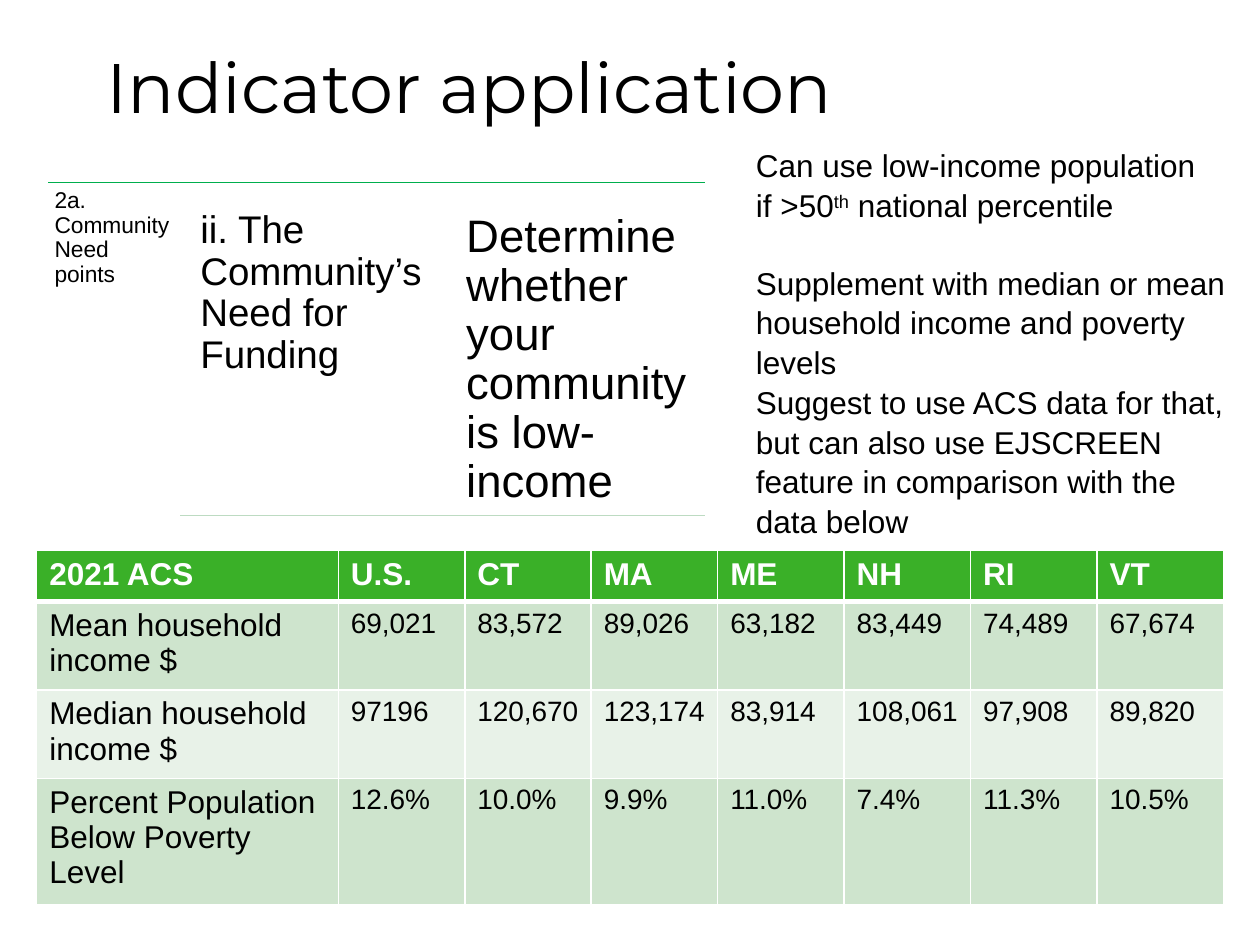
"""Build the indicator application slide."""
from dataclasses import dataclass

import pptx
import pptx.dml.color
import pptx.enum.shapes
import pptx.enum.text
import pptx.oxml
import pptx.oxml.ns
import pptx.util
from pptx.util import Cm

RGBColor = pptx.dml.color.RGBColor
BLACK = RGBColor(0, 0, 0)
WHITE = RGBColor(0xFF, 0xFF, 0xFF)
GREEN = RGBColor(0x00, 0xAE, 0x4D)
PALE = RGBColor(0xBD, 0xDB, 0xC2)
HEAD = RGBColor(0x3A, 0xB0, 0x28)
BANDS = (RGBColor(0xCE, 0xE4, 0xCD), RGBColor(0xE8, 0xF2, 0xE8))
NS = pptx.oxml.ns.nsdecls("a")


@dataclass
class Note:
    text: str
    left: float
    top: float
    width: float
    height: float
    size: int
    inset: float


@dataclass
class Rule:
    left: float
    right: float
    top: float
    color: RGBColor


NOTES = (
    Note("2a. Community Need points", 0.97, 3.68, 2.65, 7.04, 13, 0.13),
    Note("ii. The Community’s Need for Funding", 3.81, 4.01, 5.11, 6.38, 22, 0.23),
    Note("Determine whether your community is low-income",
         9.12, 4.01, 5.11, 6.38, 26, 0.28),
)
RULES = (Rule(0.97, 14.22, 3.68, GREEN), Rule(3.63, 14.22, 10.39, PALE))
SIDE = (
    ("Can use low-income population",),
    ("if >50", "th", " national percentile"),
    ("Supplement with median or mean household income and poverty levels",),
    ("Suggest to use ACS data for that, but can also use EJSCREEN feature"
     " in comparison with the data below",),
)
DATA = (
    ("2021 ACS", "U.S.", "CT", "MA", "ME", "NH", "RI", "VT"),
    ("Mean household income $", "69,021", "83,572", "89,026", "63,182",
     "83,449", "74,489", "67,674"),
    ("Median household income $", "97196", "120,670", "123,174", "83,914",
     "108,061", "97,908", "89,820"),
    ("Percent Population Below Poverty Level", "12.6%", "10.0%", "9.9%",
     "11.0%", "7.4%", "11.3%", "10.5%"),
)
ROWS = (1.03, 1.78, 1.78, 2.54)


def style(part, size: int, color: RGBColor = BLACK, face: str = "Arial",
          bold: bool = False) -> None:
    """Format every run of a paragraph."""
    for run in part.runs:
        run.font.size = pptx.util.Pt(size)
        run.font.name = face
        run.font.bold = bold
        run.font.color.rgb = color


def add_frame(slide, left: float, top: float, width: float, height: float):
    """Add a wrapping text box and return its frame."""
    box = slide.shapes.add_textbox(Cm(left), Cm(top), Cm(width), Cm(height))
    box.text_frame.word_wrap = True
    return box.text_frame


def add_note(slide, note: Note) -> None:
    """Add one column of the outline."""
    frame = add_frame(slide, note.left, note.top, note.width, note.height)
    frame.margin_left = frame.margin_right = Cm(note.inset)
    frame.margin_top = frame.margin_bottom = Cm(note.inset)
    frame.text = note.text
    frame.paragraphs[0].line_spacing = 0.9
    style(frame.paragraphs[0], note.size)


def add_rule(slide, rule: Rule) -> None:
    """Add one flat line."""
    line = slide.shapes.add_connector(
        pptx.enum.shapes.MSO_CONNECTOR.STRAIGHT,
        Cm(rule.left), Cm(rule.top), Cm(rule.right), Cm(rule.top))
    line.line.color.rgb = rule.color
    line.line.width = pptx.util.Pt(1)
    line._element.spPr.append(pptx.oxml.parse_xml(f"<a:effectLst {NS}/>"))


def add_side(slide) -> None:
    """Add the advice at the right."""
    frame = add_frame(slide, 14.99, 2.79, 10.01, 7.95)
    for at, texts in enumerate(SIDE):
        part = frame.add_paragraph() if at else frame.paragraphs[0]
        part.line_spacing = 1.05
        for text in texts:
            run = part.add_run()
            run.text = text
            if text == "th":
                run._r.get_or_add_rPr().set("baseline", "30000")
        style(part, 18)
    frame.paragraphs[2].space_before = pptx.util.Pt(21.7)


def edge(cell, row: int) -> None:
    """Draw white borders, thick below the header."""
    thick = {(0, "B"), (1, "T")}
    for side in "LRTB":
        width = pptx.util.Pt(3 if (row, side) in thick else 1)
        cell._tc.get_or_add_tcPr().append(pptx.oxml.parse_xml(
            f'<a:ln{side} {NS} w="{width}"><a:solidFill>'
            f'<a:srgbClr val="{WHITE}"/></a:solidFill></a:ln{side}>'))


def add_grid(slide) -> None:
    """Add the income table."""
    grid = slide.shapes.add_table(
        len(DATA), len(DATA[0]), Cm(0.74), Cm(11.1), Cm(23.93), Cm(sum(ROWS))).table
    for at, col in enumerate(grid.columns):
        col.width = Cm(2.55 if at else 6.08)
    for row, texts in enumerate(DATA):
        grid.rows[row].height = Cm(ROWS[row])
        for col, text in enumerate(texts):
            cell = grid.cell(row, col)
            edge(cell, row)
            cell.fill.solid()
            cell.fill.fore_color.rgb = BANDS[(row - 1) % 2] if row else HEAD
            cell.text_frame.text = text
            style(cell.text_frame.paragraphs[0], 16 if row and col else 18,
                  BLACK if row else WHITE, bold=row == 0)


def add_title(slide) -> None:
    """Fill and place the title."""
    title = slide.shapes.title
    title.left, title.top = Cm(1.9), Cm(0)
    title.width, title.height = Cm(21.9), Cm(3.68)
    frame = title.text_frame
    frame.text = "Indicator application"
    frame.vertical_anchor = pptx.enum.text.MSO_ANCHOR.MIDDLE
    part = frame.paragraphs[0]
    part.alignment = pptx.enum.text.PP_ALIGN.LEFT
    part.line_spacing = 0.9
    style(part, 40, face="Montserrat")


def main() -> None:
    """Build and save the deck."""
    deck = pptx.Presentation()
    deck.slide_width, deck.slide_height = Cm(25.4), Cm(19.05)
    slide = deck.slides.add_slide(deck.slide_layouts[5])
    add_title(slide)
    for rule in RULES:
        add_rule(slide, rule)
    for note in NOTES:
        add_note(slide, note)
    add_side(slide)
    add_grid(slide)
    deck.save("out.pptx")


if __name__ == "__main__":
    main()
